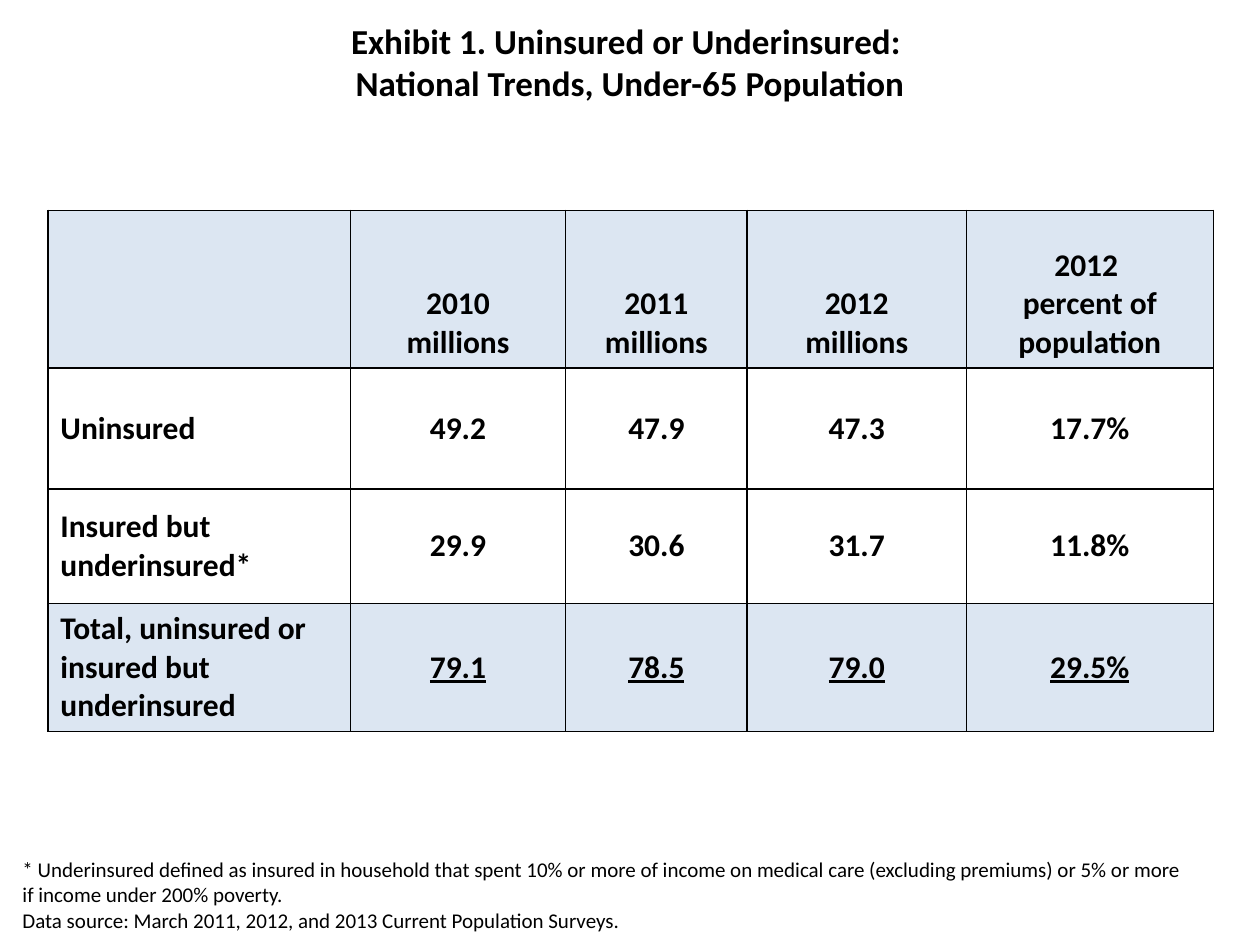
from dataclasses import dataclass

import pptx
import pptx.dml.color
import pptx.enum.text
import pptx.oxml
import pptx.util

ALIGN = pptx.enum.text.PP_ALIGN
ANCHOR = pptx.enum.text.MSO_ANCHOR
COLORS = {"text": "000000", "border": "000000", "band": "DCE6F2"}
FONT = "Calibri"
WIDTH, HEIGHT = pptx.util.Inches(10), pptx.util.Inches(7.5)
COLUMNS = (2.4, 1.71, 1.44, 1.74, 1.96)
NS = "http://schemas.openxmlformats.org/drawingml/2006/main"


@dataclass(frozen=True)
class Row:
    height: float
    cells: tuple[str, ...]
    anchor: ANCHOR = ANCHOR.MIDDLE
    shaded: bool = False
    underlined: bool = False


ROWS = (
    Row(1.25, ("", "2010\nmillions", "2011\nmillions", "2012\nmillions",
               "2012 \npercent of population"), anchor=ANCHOR.BOTTOM, shaded=True),
    Row(0.96, ("Uninsured", "49.2", "47.9", "47.3", "17.7%")),
    Row(0.91, ("Insured but underinsured*", "29.9", "30.6", "31.7", "11.8%")),
    Row(0.88, ("Total, uninsured or insured but underinsured",
               "79.1", "78.5", "79.0", "29.5%"), shaded=True, underlined=True),
)


def share(x: float, y: float, w: float, h: float) -> tuple[int, ...]:
    """Turn shares of the slide's size into left, top, width, height."""
    return int(x * WIDTH), int(y * HEIGHT), int(w * WIDTH), int(h * HEIGHT)


def format_text(tf, size: float, align: ALIGN, bold: bool = False,
                underline: bool = False) -> None:
    for p in tf.paragraphs:
        p.alignment = align
        p.font.name = FONT
        p.font.size = pptx.util.Pt(size)
        p.font.bold = bold
        p.font.underline = underline
        p.font.color.rgb = pptx.dml.color.RGBColor.from_string(COLORS["text"])


def add_borders(cell, width: float = 1) -> None:
    tc_pr = cell._tc.get_or_add_tcPr()
    for i, side in enumerate(("lnL", "lnR", "lnT", "lnB")):
        tc_pr.insert(i, pptx.oxml.parse_xml(
            f'<a:{side} xmlns:a="{NS}" w="{pptx.util.Pt(width)}"><a:solidFill>'
            f'<a:srgbClr val="{COLORS["border"]}"/></a:solidFill></a:{side}>'))


def add_title(s, text: str) -> None:
    title = s.shapes.title
    title.left, title.top, title.width, title.height = share(0, 0.01, 1, 0.11)
    tf = title.text_frame
    tf.text = text
    tf.vertical_anchor = ANCHOR.MIDDLE
    format_text(tf, 20, ALIGN.CENTER, bold=True)


def add_trend_table(s) -> None:
    x, y, _, _ = share(0.04, 0.22, 0, 0)
    x, y = pptx.util.Inches(0.38), pptx.util.Inches(1.67)
    table = s.shapes.add_table(
        len(ROWS), len(COLUMNS), x, y, pptx.util.Inches(sum(COLUMNS)),
        pptx.util.Inches(sum(row.height for row in ROWS))).table
    for column, width in zip(table.columns, COLUMNS):
        column.width = pptx.util.Inches(width)
    for r, row in enumerate(ROWS):
        table.rows[r].height = pptx.util.Inches(row.height)
        for c, text in enumerate(row.cells):
            cell = table.cell(r, c)
            cell.text = text
            cell.vertical_anchor = row.anchor
            format_text(cell.text_frame, 18, ALIGN.CENTER if c else ALIGN.LEFT,
                        bold=True, underline=row.underlined and c > 0)
            if row.shaded:
                cell.fill.solid()
                cell.fill.fore_color.rgb = pptx.dml.color.RGBColor.from_string(
                    COLORS["band"])
            else:
                cell.fill.background()
            add_borders(cell)


def add_footnote(s, text: str) -> None:
    tf = s.shapes.add_textbox(*share(0.008, 0.9, 0.942, 0.095)).text_frame
    tf.word_wrap = True
    tf.auto_size = pptx.enum.text.MSO_AUTO_SIZE.SHAPE_TO_FIT_TEXT
    tf.text = text
    format_text(tf, 12, ALIGN.LEFT)


def main() -> None:
    prs = pptx.Presentation()
    prs.slide_width, prs.slide_height = WIDTH, HEIGHT
    s = prs.slides.add_slide(prs.slide_layouts[5])
    add_title(s, "Exhibit 1. Uninsured or Underinsured: \v"
                 "National Trends, Under-65 Population")
    add_trend_table(s)
    add_footnote(s, "* Underinsured defined as insured in household that spent 10% "
                    "or more of income on medical care (excluding premiums) or 5% "
                    "or more if income under 200% poverty. \v"
                    "Data source: March 2011, 2012, and 2013 Current Population "
                    "Surveys.")
    prs.save("out.pptx")


if __name__ == "__main__":
    main()
